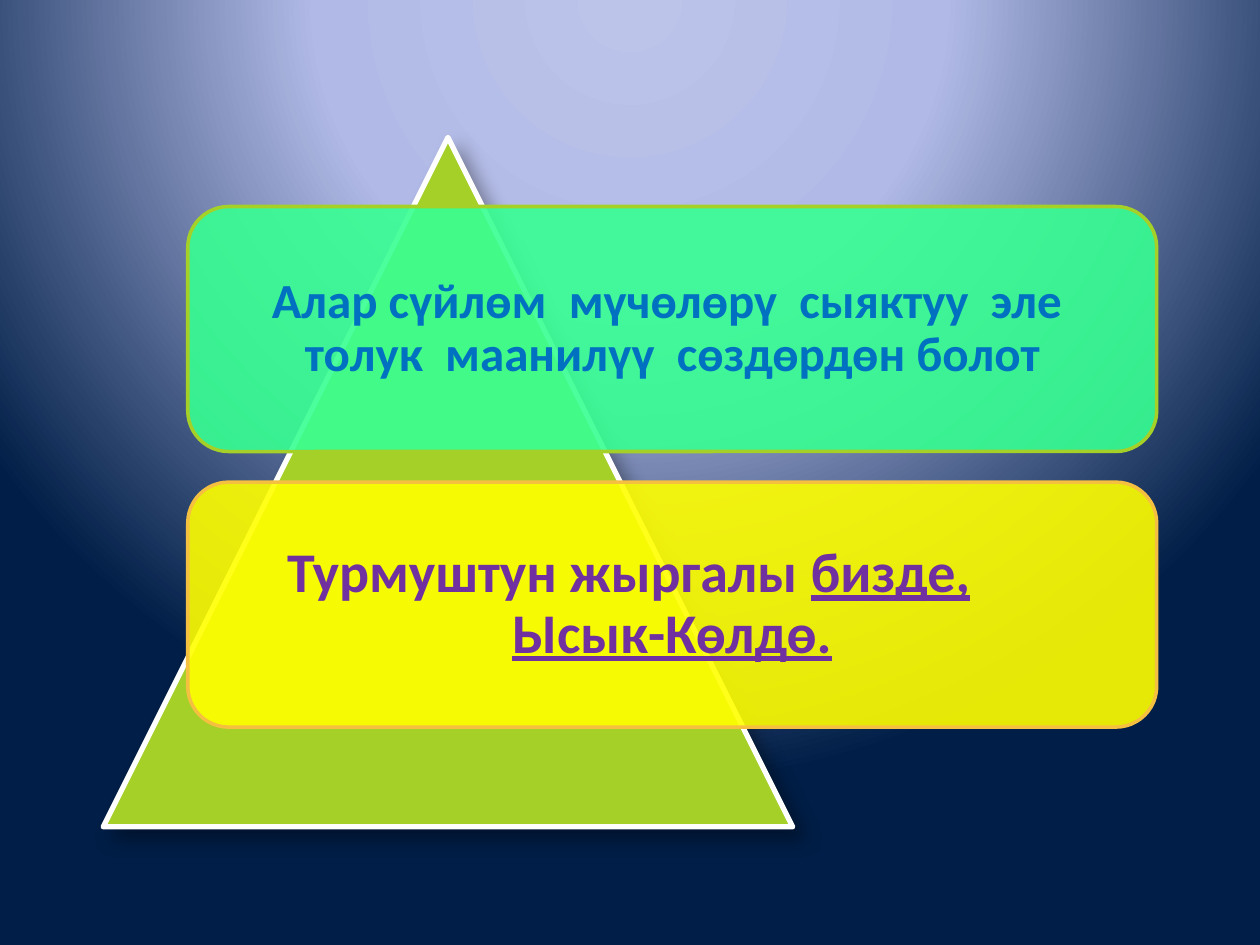
from lxml.etree import SubElement
from pptx import Presentation
from pptx.dml.color import RGBColor
from pptx.enum.shapes import MSO_SHAPE
from pptx.enum.text import MSO_ANCHOR, PP_ALIGN
from pptx.oxml import parse_xml
from pptx.oxml.ns import nsdecls, qn
from pptx.util import Pt

WHITE = RGBColor(0xFF, 0xFF, 0xFF)
LIME = RGBColor(0xA5, 0xD0, 0x28)
MINT = RGBColor(0x37, 0xFF, 0x92)
YELLOW = RGBColor(0xFF, 0xFF, 0x00)
AMBER = RGBColor(0xF5, 0xC0, 0x40)
BLUE = RGBColor(0x00, 0x70, 0xC0)
PURPLE = RGBColor(0x70, 0x30, 0xA0)
PALE_BLUE = RGBColor(0xBC, 0xC4, 0xEA)
SOFT_BLUE = RGBColor(0xB1, 0xBA, 0xE6)
NAVY = RGBColor(0x00, 0x1E, 0x47)


def set_background(slide, stops):
    """Fill the slide with a circular gradient centred above its top edge."""
    stop_list = "".join(
        f'<a:gs pos="{percent * 1000}"><a:srgbClr val="{color}"/></a:gs>'
        for percent, color in stops
    )
    background = parse_xml(
        f'<p:bg {nsdecls("p", "a")}><p:bgPr><a:gradFill rotWithShape="1">'
        f"<a:gsLst>{stop_list}</a:gsLst>"
        '<a:path path="circle"><a:fillToRect l="50000" t="-80000" r="50000" b="180000"/></a:path>'
        "</a:gradFill><a:effectLst/></p:bgPr></p:bg>"
    )
    slide.element.cSld.insert(0, background)


def add_shape(slide, kind, box, fill, line, line_width):
    """Add a filled and outlined preset shape without a shadow."""
    shape = slide.shapes.add_shape(kind, *(Pt(length) for length in box))
    shape.shadow.inherit = False
    shape.fill.solid()
    shape.fill.fore_color.rgb = fill
    shape.line.color.rgb = line
    shape.line.width = Pt(line_width)
    return shape


def add_run(paragraph, text, *, size, color, underline=False):
    """Add a bold run of text with the given format."""
    run = paragraph.add_run()
    run.text = text
    font = run.font
    font.name = "Calibri"
    font.size = Pt(size)
    font.bold = True
    font.underline = underline
    font.color.rgb = color


def add_pyramid(slide, box):
    """Draw the triangle with round corners and a soft shadow."""
    triangle = add_shape(slide, MSO_SHAPE.ISOSCELES_TRIANGLE, box, LIME, WHITE, 3)
    properties = triangle.element.spPr
    SubElement(properties.find(qn("a:ln")), qn("a:round"))
    shadow = parse_xml(
        f'<a:outerShdw {nsdecls("a")} blurRad="{Pt(10.2)}" dist="{Pt(8)}" dir="2700000" '
        'algn="tl" rotWithShape="0"><a:srgbClr val="000000"><a:alpha val="35000"/>'
        "</a:srgbClr></a:outerShdw>"
    )
    properties.find(qn("a:effectLst")).append(shadow)


def add_card(slide, box, card):
    """Draw one translucent rounded card with its centred text."""
    shape = add_shape(slide, MSO_SHAPE.ROUNDED_RECTANGLE, box, card["fill"], card["line"], 2)
    color = shape.element.spPr.find(qn("a:solidFill"))[0]
    SubElement(color, qn("a:alpha"), val="90000")
    frame = shape.text_frame
    frame.word_wrap = True
    frame.vertical_anchor = MSO_ANCHOR.MIDDLE
    inset = Pt(card["inset"])
    frame.margin_left = frame.margin_top = frame.margin_right = frame.margin_bottom = inset
    paragraph = frame.paragraphs[0]
    paragraph.alignment = PP_ALIGN.CENTER
    paragraph.line_spacing = 0.9
    if "tab" in card:
        tabs = SubElement(paragraph._p.get_or_add_pPr(), qn("a:tabLst"))
        SubElement(tabs, qn("a:tab"), pos=str(Pt(card["tab"])), algn="l")
    for text, underline in card["runs"]:
        add_run(paragraph, text, size=card["size"], color=card["color"], underline=underline)


def add_cards(slide, box, cards):
    """Stack the cards in the box with gaps of one eighth of a card."""
    left, top, width, height = box
    card_height = height / (len(cards) + (len(cards) - 1) / 8)
    for index, card in enumerate(cards):
        card_top = top + index * card_height * 9 / 8
        add_card(slide, (left, card_top, width, card_height), card)


def main():
    """Build and save the slide."""
    presentation = Presentation()
    presentation.slide_width = Pt(720)
    presentation.slide_height = Pt(540)
    slide = presentation.slides.add_slide(presentation.slide_layouts[6])
    set_background(slide, [(0, PALE_BLUE), (40, SOFT_BLUE), (100, NAVY)])
    add_pyramid(slide, (59, 78.5, 394, 394))
    cards = [
        {
            "fill": MINT, "line": LIME, "color": BLUE, "size": 28, "inset": 8.4,
            "runs": [("Алар сүйлөм  мүчөлөрү  сыяктуу  эле  толук  маанилүү  сөздөрдөн болот", False)],
        },
        {
            "fill": YELLOW, "line": AMBER, "color": PURPLE, "size": 32, "inset": 9.6, "tab": 440,
            "runs": [("Турмуштун жыргалы ", False), ("бизде,\tЫсык-Көлдө.", True)],
        },
    ]
    add_cards(slide, (107.3, 118, 553.7, 297.5), cards)
    presentation.save("out.pptx")


if __name__ == "__main__":
    main()
